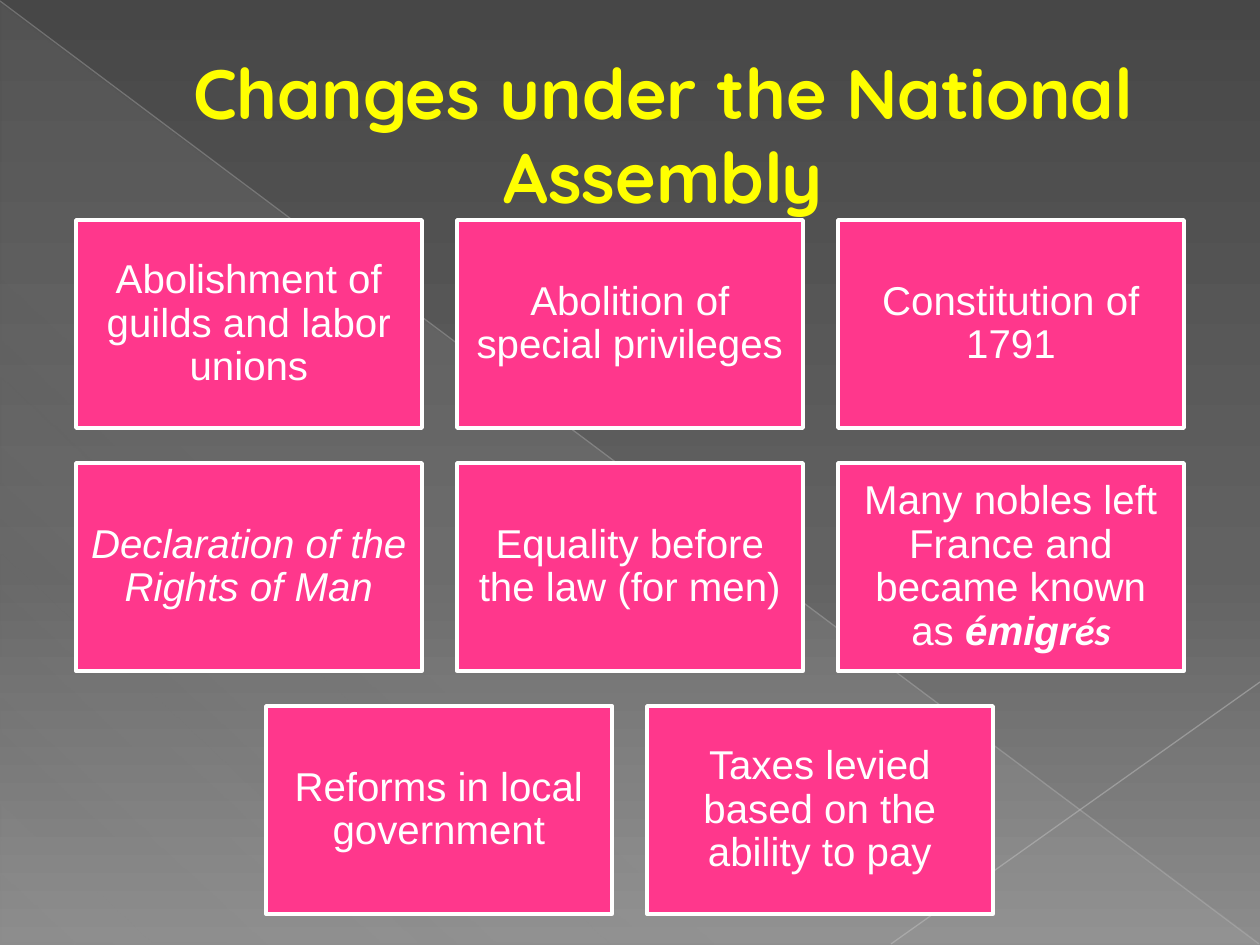
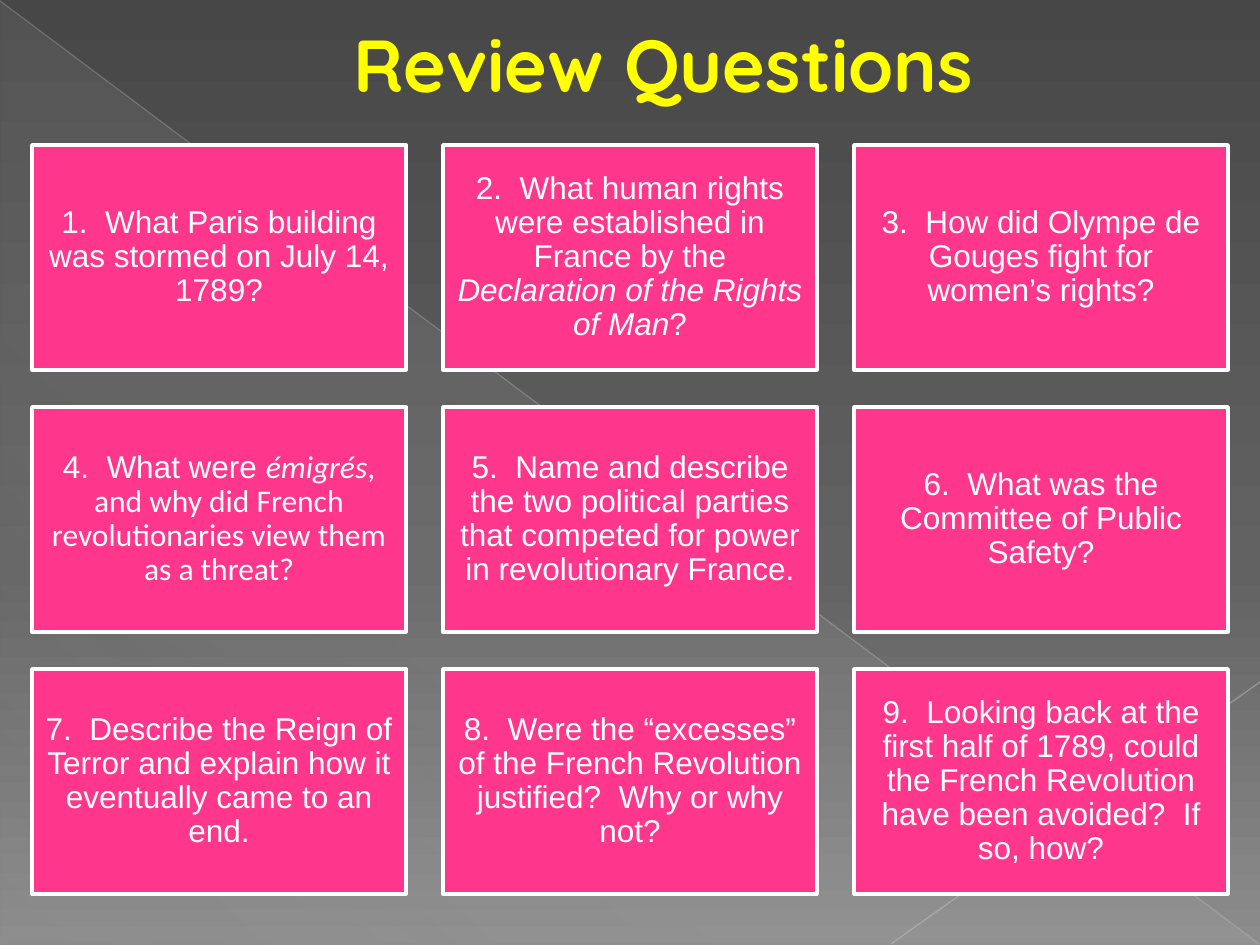
"""Build two slides on the French Revolution: National Assembly changes and review questions."""
from dataclasses import dataclass

from lxml.etree import SubElement
from pptx import Presentation
from pptx.dml.color import RGBColor as Rgb
from pptx.enum.shapes import MSO_CONNECTOR as Connector
from pptx.enum.shapes import MSO_SHAPE as Shape
from pptx.enum.shapes import PP_PLACEHOLDER as Placeholder
from pptx.enum.text import MSO_ANCHOR as Anchor
from pptx.enum.text import MSO_AUTO_SIZE as AutoSize
from pptx.enum.text import PP_ALIGN as Align
from pptx.oxml.ns import qn
from pptx.util import Emu, Pt

SLIDE_WIDTH, SLIDE_HEIGHT = 1260, 945


@dataclass(frozen=True)
class Theme:
    title_color: str = "FFFF00"
    card_fill: str = "FF378C"
    card_ink: str = "FFFFFF"
    backdrop: tuple = ((0, "474747", 100), (60, "626262", 100), (100, "8C8C8C", 100))
    sheen: tuple = ((0, "D2D2D2", 10), (70, "D2D2D2", 8), (100, "D2D2D2", 1))
    falling_ray: str = "BEBEBE"
    rising_ray: str = "C5C5C5"
    title_font: str = "Quicksand"
    card_font: str = "Arial"
    accent_font: str = "Calibri"
    changes_title_size: int = 40
    questions_title_size: int = 42
    changes_card_size: int = 23
    questions_card_size: int = 18
    card_border: int = 2
    ray_width: float = 0.75


theme = Theme()


def px(length):
    return Emu(round(length * 914400 / 126))


def set_gradient(owner, fill, stops, angle):
    fill.gradient()
    gradient = owner.element.find(".//" + qn("a:gradFill"))
    for child in list(gradient):
        gradient.remove(child)
    stop_list = SubElement(gradient, qn("a:gsLst"))
    for position, color, opacity in stops:
        stop = SubElement(stop_list, qn("a:gs"), pos=str(position * 1000))
        tint = SubElement(stop, qn("a:srgbClr"), val=color)
        if opacity < 100:
            SubElement(tint, qn("a:alpha"), val=str(opacity * 1000))
    SubElement(gradient, qn("a:lin"), ang=str(angle * 60000), scaled="0")


ITALIC = {"italic": True}
BOLD_ITALIC = {"bold": True, "italic": True}
ACCENT = {"name": theme.accent_font}

changes = [
    [("Abolishment of guilds and labor unions", {})],
    [("Abolition of special privileges", {})],
    [("Constitution of 1791", {})],
    [("Declaration of the Rights of Man", ITALIC)],
    [("Equality before the law (for men)", {})],
    [("Many nobles left France and became known as ", {}),
     ("émigr", BOLD_ITALIC), ("és", BOLD_ITALIC | ACCENT)],
    [("Reforms in local government", {})],
    [("Taxes levied based on the ability to pay", {})],
]
questions = [
    [("1.  What Paris building was stormed on July 14, 1789?", {})],
    [("2.  What human rights were established in France by the ", {}),
     ("Declaration of the Rights of Man", ITALIC), ("?", {})],
    [("3.  How did Olympe de Gouges fight for women’s rights?", {})],
    [("4.  What were ", {}), ("émigrés", ITALIC | ACCENT),
     (", and why did French revolutionaries view them as a threat?", ACCENT)],
    [("5.  Name and describe the two political parties that competed for power "
      "in revolutionary France.", {})],
    [("6.  What was the Committee of Public Safety?", {})],
    [("7.  Describe the Reign of Terror and explain how it eventually came to an end.", {})],
    [("8.  Were the “excesses” of the French Revolution justified?  Why or why not?", {})],
    [("9.  Looking back at the first half of 1789, could the French Revolution "
      "have been avoided?  If so, how?", {})],
]
pages = [
    dict(heading="Changes under the National Assembly", heading_size=theme.changes_title_size,
         heading_top=37, heading_height=193, cards=changes, card_size=theme.changes_card_size,
         grid_top=220, width=346, height=208, gap=35, inset=13),
    dict(heading="Review Questions", heading_size=theme.questions_title_size,
         heading_top=0, heading_height=126, cards=questions, card_size=theme.questions_card_size,
         grid_top=145, width=374, height=225, gap=37, inset=9),
]
COLUMNS = 3

prs = Presentation()
prs.slide_width, prs.slide_height = px(SLIDE_WIDTH), px(SLIDE_HEIGHT)
layout = prs.slide_layouts[5]
slides = [prs.slides.add_slide(layout) for page in pages]

for placeholder in list(layout.placeholders):
    if placeholder.placeholder_format.type != Placeholder.TITLE:
        layout.shapes.element.remove(placeholder.element)
set_gradient(layout, layout.background.fill, theme.backdrop, 90)

sheen = slides[0].shapes.add_shape(Shape.RIGHT_TRIANGLE, px(1), px(3), px(1259), px(942))
sheen.shadow.inherit = False
sheen.line.fill.background()
set_gradient(sheen, sheen.fill, theme.sheen, 133)
backdrop_parts = [sheen]
for start_x, start_y, end_x, end_y, color, opacity in (
    (0, 1, 1259, 944, theme.falling_ray, 35),
    (1260, 682, 891, 944, theme.rising_ray, 45),
):
    ray = slides[0].shapes.add_connector(
        Connector.STRAIGHT, px(start_x), px(start_y), px(end_x), px(end_y))
    ray.line.width = Pt(theme.ray_width)
    ray.line.color.rgb = Rgb.from_string(color)
    SubElement(ray.element.find(".//" + qn("a:srgbClr")), qn("a:alpha"), val=str(opacity * 1000))
    SubElement(ray.element.spPr, qn("a:effectLst"))
    backdrop_parts.append(ray)
for part in backdrop_parts:
    layout.shapes.element.append(part.element)

for slide, page in zip(slides, pages):
    heading = slide.shapes.title
    heading.left, heading.top = px(63), px(page["heading_top"])
    heading.width, heading.height = px(1134), px(page["heading_height"])
    frame = heading.text_frame
    frame.text = page["heading"]
    frame.word_wrap = True
    frame.auto_size = AutoSize.NONE
    frame.vertical_anchor = Anchor.MIDDLE
    frame.margin_left = px(79)
    line = frame.paragraphs[0]
    line.alignment = Align.CENTER
    line.font.name = theme.title_font
    line.font.size = Pt(page["heading_size"])
    line.font.bold = True
    line.font.color.rgb = Rgb.from_string(theme.title_color)

    cards, width, height, gap = (page[key] for key in ("cards", "width", "height", "gap"))
    for first in range(0, len(cards), COLUMNS):
        row = cards[first:first + COLUMNS]
        row_left = (SLIDE_WIDTH - len(row) * width - (len(row) - 1) * gap) // 2
        top = page["grid_top"] + first // COLUMNS * (height + gap)
        for column, segments in enumerate(row):
            card = slide.shapes.add_shape(
                Shape.RECTANGLE, px(row_left + column * (width + gap)), px(top),
                px(width), px(height))
            card.shadow.inherit = False
            card.fill.solid()
            card.fill.fore_color.rgb = Rgb.from_string(theme.card_fill)
            card.line.color.rgb = Rgb.from_string(theme.card_ink)
            card.line.width = Pt(theme.card_border)
            frame = card.text_frame
            frame.word_wrap = True
            frame.vertical_anchor = Anchor.MIDDLE
            frame.margin_left = frame.margin_right = px(page["inset"])
            frame.margin_top = frame.margin_bottom = px(page["inset"])
            line = frame.paragraphs[0]
            line.alignment = Align.CENTER
            line.line_spacing = 0.9
            line.font.name = theme.card_font
            line.font.size = Pt(page["card_size"])
            line.font.color.rgb = Rgb.from_string(theme.card_ink)
            for text, style in segments:
                run = line.add_run()
                run.text = text
                for attribute, value in style.items():
                    setattr(run.font, attribute, value)

prs.save("out.pptx")
